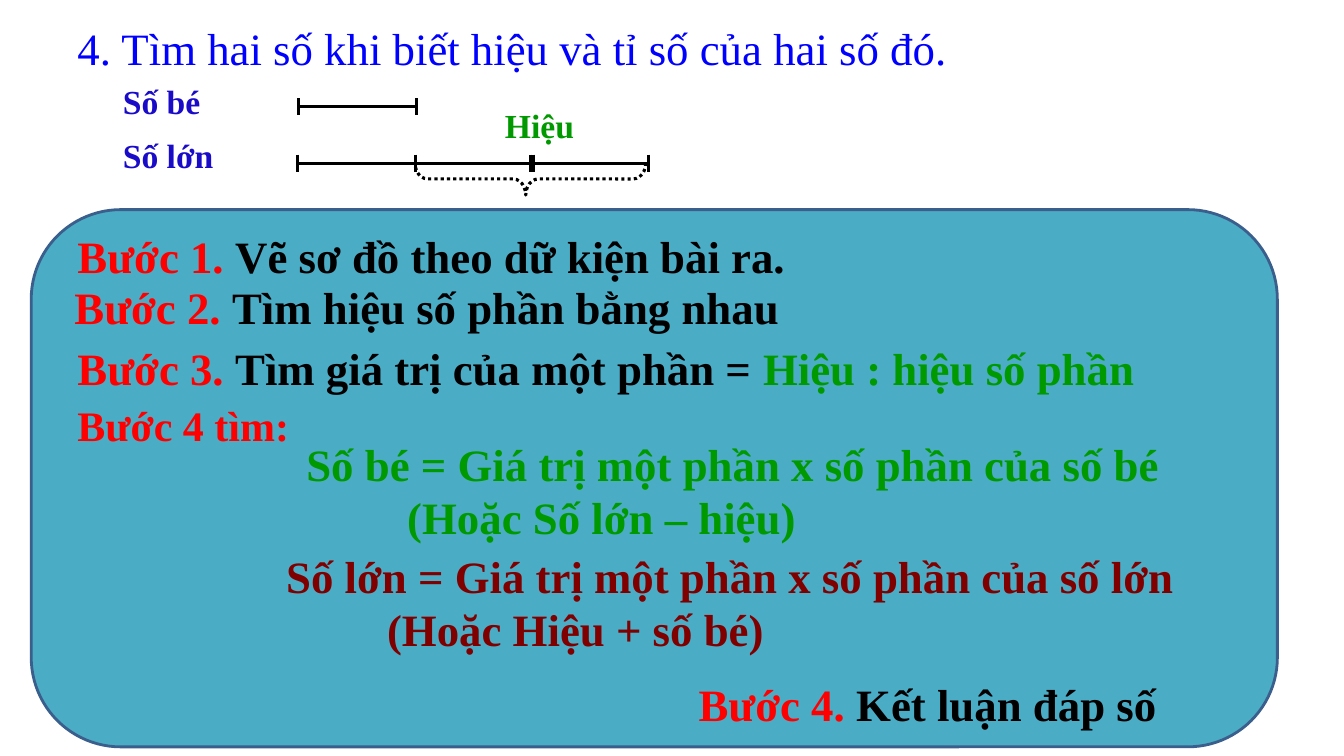
from lxml import etree
from pptx import Presentation
from pptx.dml.color import RGBColor
from pptx.enum.dml import MSO_LINE
from pptx.enum.shapes import MSO_CONNECTOR, MSO_SHAPE
from pptx.enum.text import MSO_AUTO_SIZE, PP_ALIGN
from pptx.oxml.ns import qn
from pptx.util import Inches, Pt

STRAIGHT = MSO_CONNECTOR.STRAIGHT
ROUNDED = MSO_SHAPE.ROUNDED_RECTANGLE
BRACE = MSO_SHAPE.RIGHT_BRACE
DOTTED = MSO_LINE.ROUND_DOT
FIT_SHAPE = MSO_AUTO_SIZE.SHAPE_TO_FIT_TEXT
LEFT, JUSTIFY = PP_ALIGN.LEFT, PP_ALIGN.JUSTIFY

FONT = "Times New Roman"
COLORS = {
    "title": "0000FF", "label": "190BC8", "green": "009900", "red": "FF0000",
    "maroon": "800000", "black": "000000", "panel": "4BACC6", "border": "3A5F8C",
}
SEGMENT = 1.17  # length of one equal part
TICK = 0.17


def color(name):
    return RGBColor.from_string(COLORS[name])


def add_text(slide, box, paragraphs, size=32, bold=True, align=LEFT):
    """Each paragraph is a list of (text, color name) runs."""
    shape = slide.shapes.add_textbox(*map(Inches, box))
    frame = shape.text_frame
    frame.word_wrap = True
    frame.auto_size = FIT_SHAPE
    for index, runs in enumerate(paragraphs):
        paragraph = frame.paragraphs[0] if index == 0 else frame.add_paragraph()
        paragraph.alignment = align
        for text, color_name in runs:
            run = paragraph.add_run()
            run.text = text
            run.font.name = FONT
            run.font.size = Pt(size)
            run.font.bold = bold
            run.font.color.rgb = color(color_name)
    return frame


def add_formula(slide, box, formula, alternative, color_name):
    """A formula with an indented alternative below it."""
    frame = add_text(slide, box, [[(formula, color_name)], [(alternative, color_name)]],
                     align=JUSTIFY)
    properties = frame.paragraphs[1]._p.get_or_add_pPr()
    properties.set("marL", str(Inches(1)))
    properties.set("indent", "0")


def add_line(slide, x1, y1, x2, y2):
    line = slide.shapes.add_connector(STRAIGHT, *map(Inches, (x1, y1, x2, y2)))
    line.line.color.rgb = color("black")
    line.line.width = Pt(2.25)
    etree.SubElement(line._element.spPr, qn("a:effectLst"))


def add_bar(slide, left, y, parts):
    """A horizontal bar with a tick at the end of every part."""
    add_line(slide, left + 0.01, y, left + parts * SEGMENT + 0.01, y)
    for part in range(parts + 1):
        x = left + part * SEGMENT
        add_line(slide, x, y - TICK / 2, x, y + TICK / 2)


def add_outlined_shape(slide, kind, box, line_color, width):
    shape = slide.shapes.add_shape(kind, *map(Inches, box))
    shape.shadow.inherit = False
    shape.line.color.rgb = color(line_color)
    shape.line.width = Pt(width)
    return shape


def add_panel(slide):
    panel = add_outlined_shape(slide, ROUNDED, (0.31, 2.08, 12.36, 5.33), "border", 2)
    panel.fill.solid()
    panel.fill.fore_color.rgb = color("panel")


def add_brace(slide):
    brace = add_outlined_shape(slide, BRACE, (5.1, 0.63, 0.32, 2.29), "black", 2.25)
    brace.fill.background()
    brace.line.dash_style = DOTTED
    brace.rotation = 90
    brace.adjustments[0] = 0.39
    brace.adjustments[1] = 0.52


def main():
    presentation = Presentation()
    presentation.slide_width = Inches(13.33)
    presentation.slide_height = Inches(7.5)
    slide = presentation.slides.add_slide(presentation.slide_layouts[6])

    # Title and panel
    add_text(slide, (0.67, 0.16, 9, 0.64),
             [[("4. Tìm hai số khi biết hiệu và tỉ số của hai số đó.", "title")]], bold=False)
    add_panel(slide)

    # Segment diagram
    for box, text, color_name in (
        ((1.12, 0.75, 1.52, 0.51), "Số bé", "label"),
        ((1.12, 1.29, 2.08, 0.51), "Số lớn", "label"),
        ((4.91, 0.99, 1.33, 0.51), "Hiệu", "green"),
    ):
        add_text(slide, box, [[(text, color_name)]], size=24)
    for left, y, parts in ((2.96, 1.06, 1), (2.95, 1.62, 2), (5.26, 1.62, 1)):
        add_bar(slide, left, y, parts)
    add_brace(slide)

    # Steps
    for box, step, *details in (
        ((0.67, 2.22, 11.13, 0.64), "Bước 1. ", ("Vẽ sơ đồ theo dữ kiện bài ra.", "black")),
        ((0.64, 2.73, 11.07, 0.64), "Bước 2. ", ("Tìm hiệu số phần bằng nhau", "black")),
        ((0.67, 3.33, 11.47, 0.64), "Bước 3. ", ("Tìm giá trị của một phần = ", "black"),
         ("Hiệu : hiệu số phần", "green")),
        ((6.83, 6.66, 6.4, 0.64), "Bước 4. ", ("Kết luận đáp số", "black")),
    ):
        add_text(slide, box, [[(step, "red"), *details]], align=JUSTIFY)
    add_text(slide, (0.67, 3.91, 2.96, 0.61), [[("Bước 4 tìm:", "red")]], size=30)

    # Formulas
    add_formula(slide, (2.94, 4.28, 9.63, 1.18),
                "Số bé = Giá trị một phần x số phần của số bé", "(Hoặc Số lớn – hiệu)", "green")
    add_formula(slide, (2.74, 5.39, 10.08, 1.18),
                "Số lớn = Giá trị một phần x số phần của số lớn", "(Hoặc Hiệu + số bé)", "maroon")

    presentation.save("out.pptx")


if __name__ == "__main__":
    main()
